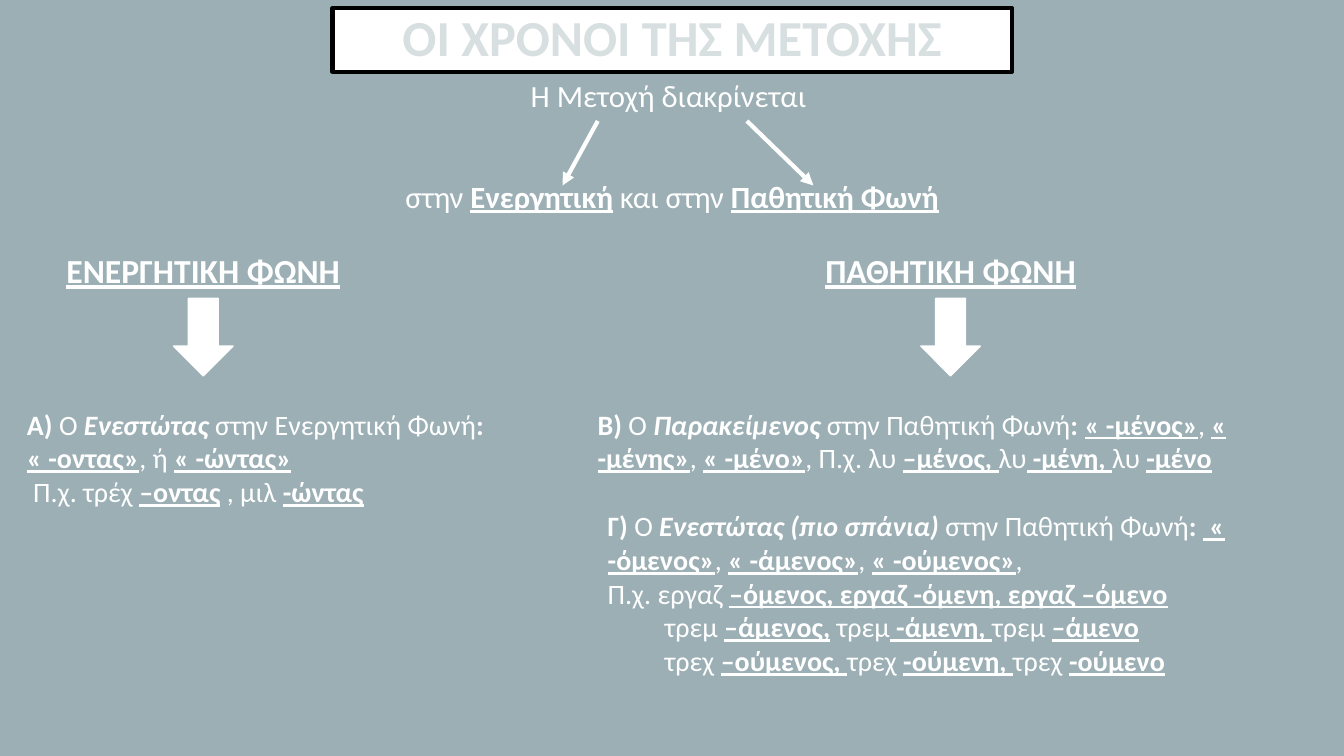
import pptx
import pptx.util
import pptx.dml.color
import pptx.enum.shapes
import pptx.enum.text
import pptx.oxml
from lxml import etree

Pt = pptx.util.Pt
SHAPE = pptx.enum.shapes.MSO_SHAPE
ALIGN = pptx.enum.text.PP_ALIGN
ANCHOR = pptx.enum.text.MSO_ANCHOR

COLORS = {"background": "9BAFB5", "white": "FFFFFF", "black": "000000", "title": "D7DFE1"}
FONT = "Calibri"

TITLE = [[("ΟΙ ΧΡΟΝΟΙ ΤΗΣ ΜΕΤΟΧΗΣ", "b")]]
INTRO = [
    [("Η Μετοχή διακρίνεται ", "")],
    [("στην ", ""), ("Ενεργητική", "bu"), (" και στην ", ""), ("Παθητική Φωνή", "bu")],
]
VOICES = [("ΕΝΕΡΓΗΤΙΚΗ ΦΩΝΗ", 145.2), ("ΠΑΘΗΤΙΚΗ ΦΩΝΗ", 679)]
BRANCHES = [(427, 86.4, 401.8, 132.5), (533.5, 86.4, 581, 132.5)]

ACTIVE_PRESENT = [
    [("Α) ", "b"), ("Ο", ""), (" Ενεστώτας ", "bi"), ("στην Ενεργητική Φωνή", ""), (":", "b"),
     (" « -οντας»", "bu"), (", ή ", ""), ("« -ώντας»", "bu")],
    [(" Π.χ. τρέχ ", ""), ("–οντας", "bu"), (" , μιλ ", ""), ("-ώντας", "bu")],
]
PASSIVE_PERFECT = [
    [("Β) ", "b"), ("Ο", ""), (" Παρακείμενος ", "bi"), ("στην Παθητική Φωνή", ""), (": ", "b"),
     ("« -μένος»", "bu"), (", ", ""), ("« -μένης»", "bu"), (", ", ""), ("« -μένο»", "bu"),
     (", Π.χ. λυ ", ""), ("–μένος, ", "bu"), ("λυ", ""), (" -μένη, ", "bu"),
     ("λυ ", ""), ("-μένο", "bu")],
]
PASSIVE_PRESENT = [
    [("Γ) ", "b"), ("Ο", ""), (" Ενεστώτας (πιο σπάνια) ", "bi"), ("στην Παθητική Φωνή", ""),
     (": ", "b"), (" « -όμενος»", "bu"), (", ", ""), ("« -άμενος»", "bu"), (", ", ""),
     ("« -ούμενος»", "bu"), (",", "")],
    [("Π.χ. εργαζ ", ""), ("–όμενος, εργαζ -όμενη, εργαζ –όμενο", "bu")],
    [("τρεμ ", ""), ("–άμενος,", "bu"), (" τρεμ", ""), (" -άμενη, ", "bu"),
     ("τρεμ ", ""), ("–άμενο", "bu")],
    [("τρεχ ", ""), ("–ούμενος, ", "bu"), ("τρεχ ", ""), ("-ούμενη, ", "bu"),
     ("τρεχ ", ""), ("-ούμενο", "bu")],
]
TENSES = [
    (ACTIVE_PRESENT, (12.2, 287.3, 355, 80)),
    (PASSIVE_PERFECT, (419.8, 287.3, 485.3, 55.4)),
    (PASSIVE_PRESENT, (427, 360, 468.7, 128.2)),
]
EXAMPLE_INDENT = 40.7


def rgb(name):
    return pptx.dml.color.RGBColor.from_string(COLORS[name])


def write(tf, text, size=20, color="white", align=ALIGN.LEFT, gap=0, indent_from=None):
    tf.word_wrap = True
    for i, runs in enumerate(text):
        p = tf.paragraphs[0] if i == 0 else tf.add_paragraph()
        p.alignment = align
        if i and gap:
            p.space_before = Pt(gap)
        if indent_from is not None and i >= indent_from:
            p._p.get_or_add_pPr().set("marL", str(Pt(EXAMPLE_INDENT)))
        for words, style in runs:
            r = p.add_run()
            r.text = words
            r.font.name = FONT
            r.font.size = Pt(size)
            r.font.color.rgb = rgb(color)
            r.font.bold = "b" in style
            r.font.italic = "i" in style
            r.font.underline = "u" in style


def add_text(s, box, text, **fmt):
    tb = s.shapes.add_textbox(*map(Pt, box))
    write(tb.text_frame, text, **fmt)


def add_block(s, kind, box, line, width):
    sp = s.shapes.add_shape(kind, *map(Pt, box))
    sp.shadow.inherit = False
    sp.fill.solid()
    sp.fill.fore_color.rgb = rgb("white")
    sp.line.color.rgb = rgb(line)
    sp.line.width = Pt(width)
    return sp


def add_title(s):
    sp = add_block(s, SHAPE.RECTANGLE, (237.6, 5.8, 485.3, 45.4), "black", 3)
    tf = sp.text_frame
    tf.vertical_anchor = ANCHOR.MIDDLE
    tf.margin_left = tf.margin_right = Pt(21.6)
    tf.margin_top = tf.margin_bottom = Pt(14.4)
    write(tf, TITLE, size=36, color="title", align=ALIGN.CENTER)
    p = tf.paragraphs[0]
    p.line_spacing = 0.9
    ln = pptx.oxml.parse_xml(
        '<a:ln xmlns:a="http://schemas.openxmlformats.org/drawingml/2006/main" '
        f'w="{Pt(1.75)}"><a:solidFill><a:srgbClr val="{COLORS["background"]}"/>'
        '</a:solidFill></a:ln>')
    p.runs[0].font._element.insert(0, ln)


def add_arrow(s, ends):
    c = s.shapes.add_connector(pptx.enum.shapes.MSO_CONNECTOR.STRAIGHT, *map(Pt, ends))
    c.line.color.rgb = rgb("white")
    c.line.width = Pt(3)
    qn = pptx.oxml.ns.qn
    etree.SubElement(c.line._get_or_add_ln(), qn("a:tailEnd"), type="triangle")
    etree.SubElement(c._element.spPr, qn("a:effectLst"))


def main():
    prs = pptx.Presentation()
    prs.slide_width, prs.slide_height = Pt(960), Pt(540)
    s = prs.slides.add_slide(prs.slide_layouts[6])
    s.background.fill.solid()
    s.background.fill.fore_color.rgb = rgb("background")

    add_title(s)
    add_text(s, (0, 51.1, 960, 488.9), INTRO, size=22, align=ALIGN.CENTER, gap=46)
    for ends in BRANCHES:
        add_arrow(s, ends)
    for name, center in VOICES:
        add_text(s, (center - 121.7, 175, 243.4, 36), [[(name, "bu")]],
                 size=24, align=ALIGN.CENTER)
        add_block(s, SHAPE.DOWN_ARROW, (center - 21.25, 213.1, 42.5, 55.4), "white", 1)
    for text, box in TENSES:
        add_text(s, box, text, indent_from=2)

    prs.save("out.pptx")


if __name__ == "__main__":
    main()
